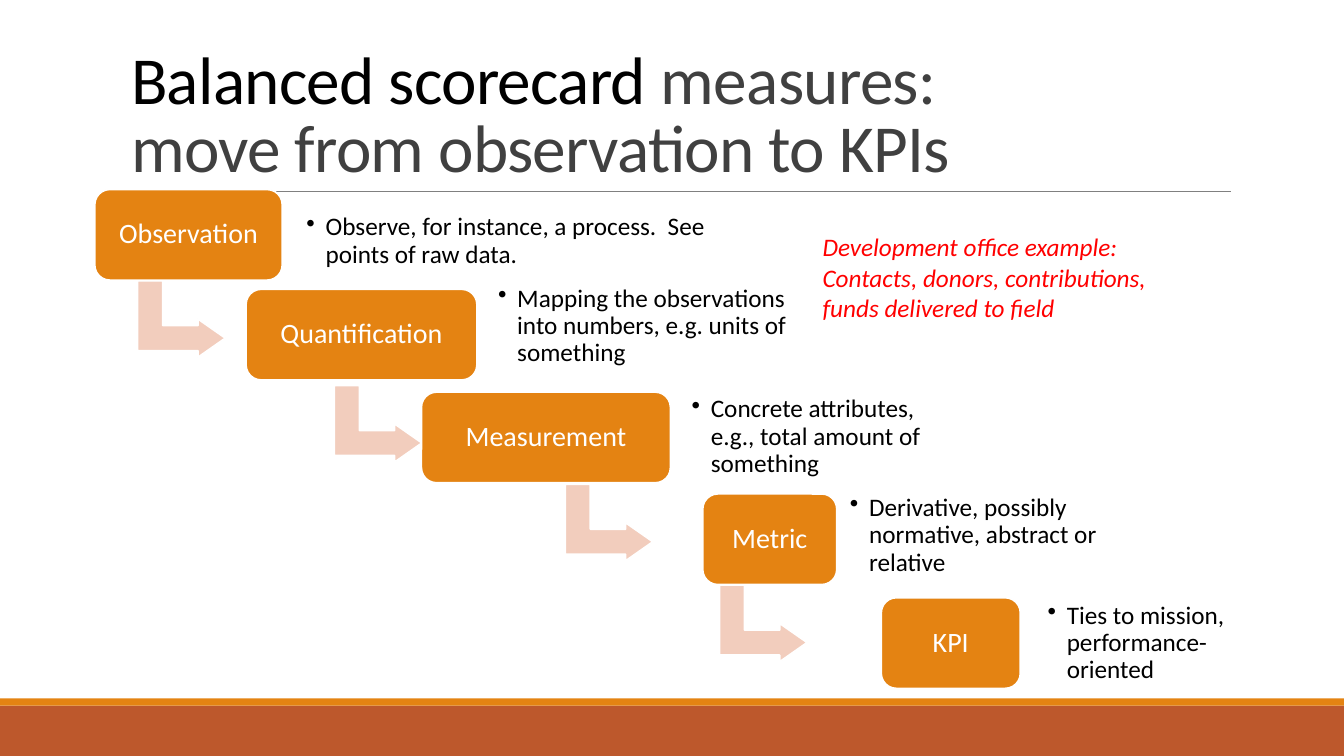
import pptx
import pptx.util
import pptx.dml.color
import pptx.enum.shapes
import pptx.enum.text
import pptx.oxml.ns
import lxml.etree

Inches = pptx.util.Inches
Pt = pptx.util.Pt
RGBColor = pptx.dml.color.RGBColor
SHAPE = pptx.enum.shapes.MSO_SHAPE
ALIGN = pptx.enum.text.PP_ALIGN
ANCHOR = pptx.enum.text.MSO_ANCHOR
qn = pptx.oxml.ns.qn

ORANGE = RGBColor(0xE4, 0x83, 0x12)
RUST = RGBColor(0xBD, 0x58, 0x2C)
PEACH = RGBColor(0xF2, 0xCD, 0xBD)
WHITE = RGBColor(0xFF, 0xFF, 0xFF)
BLACK = RGBColor(0, 0, 0)
DARK_GRAY = RGBColor(0x40, 0x40, 0x40)
RULE_GRAY = RGBColor(0x80, 0x80, 0x80)
RED = RGBColor(0xFF, 0, 0)

FONT = "Calibri"
BOX_HEIGHT = 0.9
NOTE_HEIGHT = 0.73
ARROW_WIDTH, ARROW_HEIGHT = 0.76, 0.87

# label, box (left, top, width), note, note (left, top, width), arrow (left, top)
STEPS = [
    ("Observation", (0.94, 1.88, 1.86),
     "Observe, for instance, a process.  See points of raw data.",
     (2.97, 2.03, 4.76), (1.42, 2.73)),
    ("Quantification", (2.44, 2.87, 2.29),
     "Mapping the observations into numbers, e.g. units of something",
     (4.87, 2.87, 3.27), (3.37, 3.77)),
    ("Measurement", (4.18, 3.89, 2.47),
     "Concrete attributes, e.g., total amount of something",
     (6.79, 3.97, 2.64), (5.66, 4.75)),
    ("Metric", (6.97, 4.9, 1.33),
     "Derivative, possibly normative, abstract or relative",
     (8.36, 4.95, 2.76), (7.19, 5.75)),
    ("KPI", (8.74, 5.93, 1.38),
     "Ties to mission, performance-oriented",
     (10.32, 6.02, 2.01), None),
]


def add_run(paragraph, text, size, color, italic=None):
    run = paragraph.add_run()
    run.text = text
    run.font.name = FONT
    run.font.size = Pt(size)
    run.font.color.rgb = color
    run.font.italic = italic
    return run


def add_filled_shape(slide, kind, left, top, width, height, fill, line=None):
    shape = slide.shapes.add_shape(
        kind, Inches(left), Inches(top), Inches(width), Inches(height))
    shape.shadow.inherit = False
    shape.fill.solid()
    shape.fill.fore_color.rgb = fill
    if line is None:
        shape.line.fill.background()
    else:
        shape.line.color.rgb = line
        shape.line.width = Pt(1.25)
    return shape


def set_insets(frame, inset):
    frame.margin_left = frame.margin_right = Inches(inset)
    frame.margin_top = frame.margin_bottom = Inches(inset)


def add_background(slide):
    # Footer bands
    add_filled_shape(slide, SHAPE.RECTANGLE, 0, 7, 13.33, 0.5, RUST)
    add_filled_shape(slide, SHAPE.RECTANGLE, 0, 6.93, 13.33, 0.07, ORANGE)
    # Rule under the title
    rule = slide.shapes.add_connector(
        pptx.enum.shapes.MSO_CONNECTOR.STRAIGHT,
        Inches(1.31), Inches(1.9), Inches(12.21), Inches(1.9))
    rule.line.color.rgb = RULE_GRAY
    rule.line.width = Pt(0.5)
    lxml.etree.SubElement(rule._element.spPr, qn("a:effectLst"))


def add_title(slide, left, top, width, height):
    title = slide.shapes.title
    title.left, title.top = Inches(left), Inches(top)
    title.width, title.height = Inches(width), Inches(height)
    frame = title.text_frame
    frame.auto_size = pptx.enum.text.MSO_AUTO_SIZE.NONE
    frame.word_wrap = True
    frame.vertical_anchor = ANCHOR.BOTTOM
    paragraph = frame.paragraphs[0]
    paragraph.alignment = ALIGN.LEFT
    paragraph.line_spacing = 0.85
    runs = [add_run(paragraph, "Balanced scorecard ", 48, BLACK),
            add_run(paragraph, "measures: ", 48, DARK_GRAY)]
    paragraph.add_line_break()
    runs.append(add_run(paragraph, "move from observation to KPIs", 48, DARK_GRAY))
    for run in runs:
        run.font._element.set("spc", "-50")


def add_arrow(slide, left, top):
    arrow = add_filled_shape(slide, SHAPE.BENT_UP_ARROW, left, top,
                             ARROW_WIDTH, ARROW_HEIGHT, PEACH, WHITE)
    arrow.rotation = 90
    for index, value in enumerate((0.328, 0.25, 0.358)):
        arrow.adjustments[index] = value


def add_step_box(slide, label, left, top, width):
    box = add_filled_shape(slide, SHAPE.ROUNDED_RECTANGLE, left, top,
                           width, BOX_HEIGHT, ORANGE, WHITE)
    box.adjustments[0] = 0.167
    frame = box.text_frame
    frame.word_wrap = True
    frame.vertical_anchor = ANCHOR.MIDDLE
    set_insets(frame, 0.12)
    paragraph = frame.paragraphs[0]
    paragraph.alignment = ALIGN.CENTER
    paragraph.line_spacing = 0.9
    add_run(paragraph, label, 20, WHITE)


def add_step_note(slide, note, left, top, width):
    text_box = slide.shapes.add_textbox(
        Inches(left), Inches(top), Inches(width), Inches(NOTE_HEIGHT))
    frame = text_box.text_frame
    frame.word_wrap = True
    frame.vertical_anchor = ANCHOR.MIDDLE
    set_insets(frame, 0.07)
    paragraph = frame.paragraphs[0]
    paragraph.line_spacing = 0.9
    # Hanging bullet
    properties = paragraph._p.get_or_add_pPr()
    properties.set("marL", str(Inches(0.19)))
    properties.set("indent", str(Inches(-0.19)))
    lxml.etree.SubElement(properties, qn("a:buChar")).set("char", "•")
    add_run(paragraph, note, 18, BLACK)


def add_staircase(slide):
    for label, box, note, note_box, arrow in STEPS:
        if arrow:
            add_arrow(slide, *arrow)
        add_step_box(slide, label, *box)
        add_step_note(slide, note, *note_box)


def add_example(slide, left, top, width, height):
    text_box = slide.shapes.add_textbox(
        Inches(left), Inches(top), Inches(width), Inches(height))
    frame = text_box.text_frame
    frame.word_wrap = False
    lines = ("Development office example:",
             "Contacts, donors, contributions,",
             "funds delivered to field")
    for index, line in enumerate(lines):
        paragraph = frame.add_paragraph() if index else frame.paragraphs[0]
        add_run(paragraph, line, 18, RED, italic=True)


def main():
    presentation = pptx.Presentation()
    presentation.slide_width = Inches(13.33)
    presentation.slide_height = Inches(7.5)
    slide = presentation.slides.add_slide(presentation.slide_layouts[5])
    add_background(slide)
    add_title(slide, 1.2, 0.31, 11, 1.59)
    add_staircase(slide)
    add_example(slide, 8.06, 2.25, 3.5, 1.01)
    presentation.save("out.pptx")


if __name__ == "__main__":
    main()
